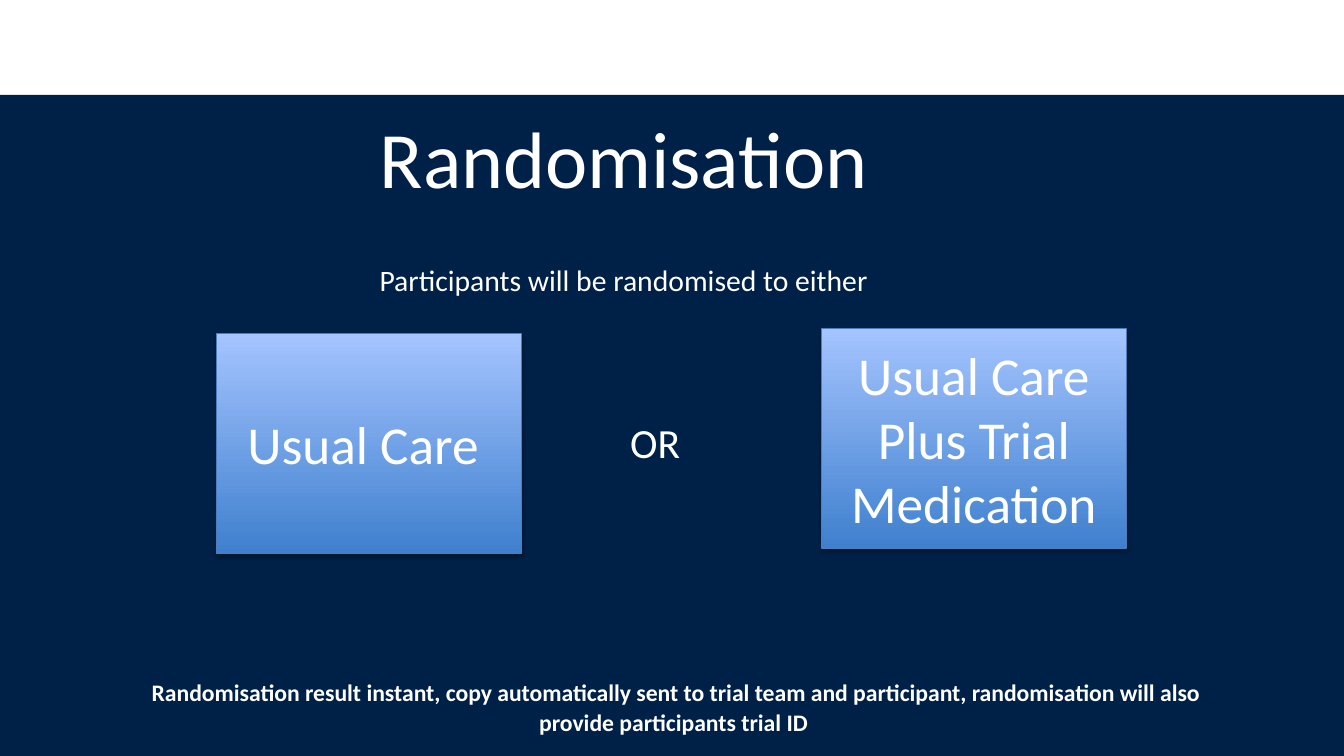
import lxml.etree
import pptx
import pptx.dml.color
import pptx.enum.shapes
import pptx.enum.text
import pptx.oxml.ns
import pptx.util

ALIGN = pptx.enum.text.PP_ALIGN
ANCHOR = pptx.enum.text.MSO_ANCHOR
WHITE = "FFFFFF"
NAVY = "002147"


def color(hex_string):
    return pptx.dml.color.RGBColor.from_string(hex_string)


def write(shape, text, size, align=ALIGN.LEFT, anchor=ANCHOR.TOP, bold=False,
          spacing=1.0, font="Calibri", ink=WHITE):
    """Fill a shape with one formatted paragraph."""
    frame = shape.text_frame
    frame.word_wrap = True
    frame.auto_size = pptx.enum.text.MSO_AUTO_SIZE.NONE
    frame.vertical_anchor = anchor
    para = frame.paragraphs[0]
    para.alignment = align
    para.line_spacing = spacing
    span = para.add_run()
    span.text = text
    span.font.name = font
    span.font.size = pptx.util.Pt(size)
    span.font.bold = bold
    span.font.color.rgb = color(ink)


class TrialSlide:
    """A title-only slide laid out on a grid of 100 columns and 100 rows."""

    gradient = ("3F80CE", "A4C4FF")
    outline = "4B7EBC"

    def __init__(self, deck):
        self.column = deck.slide_width / 100
        self.row = deck.slide_height / 100
        self.page = deck.slides.add_slide(deck.slide_layouts[5])

    def place(self, left, top, width, height):
        """Turn grid columns and rows into slide lengths."""
        return (round(left * self.column), round(top * self.row),
                round(width * self.column), round(height * self.row))

    def rectangle(self, *area):
        box = self.page.shapes.add_shape(
            pptx.enum.shapes.MSO_SHAPE.RECTANGLE, *self.place(*area))
        box.shadow.inherit = False
        return box

    def band(self, *area, fill=NAVY):
        box = self.rectangle(*area)
        box.fill.solid()
        box.fill.fore_color.rgb = color(fill)
        box.line.fill.background()
        # The band lies behind the title placeholder.
        tree = box.element.getparent()
        tree.insert(tree.index(self.page.shapes.title.element), box.element)

    def title(self, text, *area, size):
        box = self.page.shapes.title
        box.left, box.top, box.width, box.height = self.place(*area)
        write(box, text, size)

    def label(self, text, *area, **style):
        write(self.page.shapes.add_textbox(*self.place(*area)), text, **style)

    def arm(self, text, left, top):
        """Draw the box for one arm of the trial."""
        box = self.rectangle(left, top, 22.7, 29.06)
        box.fill.gradient()
        box.fill.gradient_angle = 90
        for stop, shade in zip(box.fill.gradient_stops, self.gradient):
            stop.color.rgb = color(shade)
        box.line.color.rgb = color(self.outline)
        box.line.width = pptx.util.Pt(0.75)
        self.drop_shadow(box)
        write(box, text, 36, ALIGN.CENTER, ANCHOR.MIDDLE)

    def drop_shadow(self, box):
        name = pptx.oxml.ns.qn
        effects = box.element.find(".//" + name("a:effectLst"))
        shadow = lxml.etree.SubElement(
            effects, name("a:outerShdw"), blurRad="40000", dist="23000",
            dir="5400000", rotWithShape="0")
        shade = lxml.etree.SubElement(shadow, name("a:srgbClr"), val="000000")
        lxml.etree.SubElement(shade, name("a:alpha"), val="35000")


def main():
    deck = pptx.Presentation()
    deck.slide_width = pptx.util.Inches(12.6)
    deck.slide_height = pptx.util.Inches(7.09)
    slide = TrialSlide(deck)

    slide.band(0, 12.55, 100, 87.45)
    slide.title("Randomisation", 27.46, 13.68, 40.95, 14.25, size=54)
    slide.label("Participants will be randomised to either",
                27.46, 33.99, 40.95, 6.2, size=20)
    slide.arm("Usual Care ", 16.11, 44.15)
    slide.label("OR", 46.11, 54.44, 5.95, 8.04, size=28)
    slide.arm("Usual Care Plus Trial Medication", 61.11, 43.44)
    slide.label("Randomisation result instant, copy automatically sent to trial "
                "team and participant, randomisation will also provide "
                "participants trial ID ",
                9.13, 88.72, 82.38, 9.6, size=16, bold=True,
                align=ALIGN.CENTER, spacing=1.07)
    deck.save("out.pptx")


if __name__ == "__main__":
    main()
